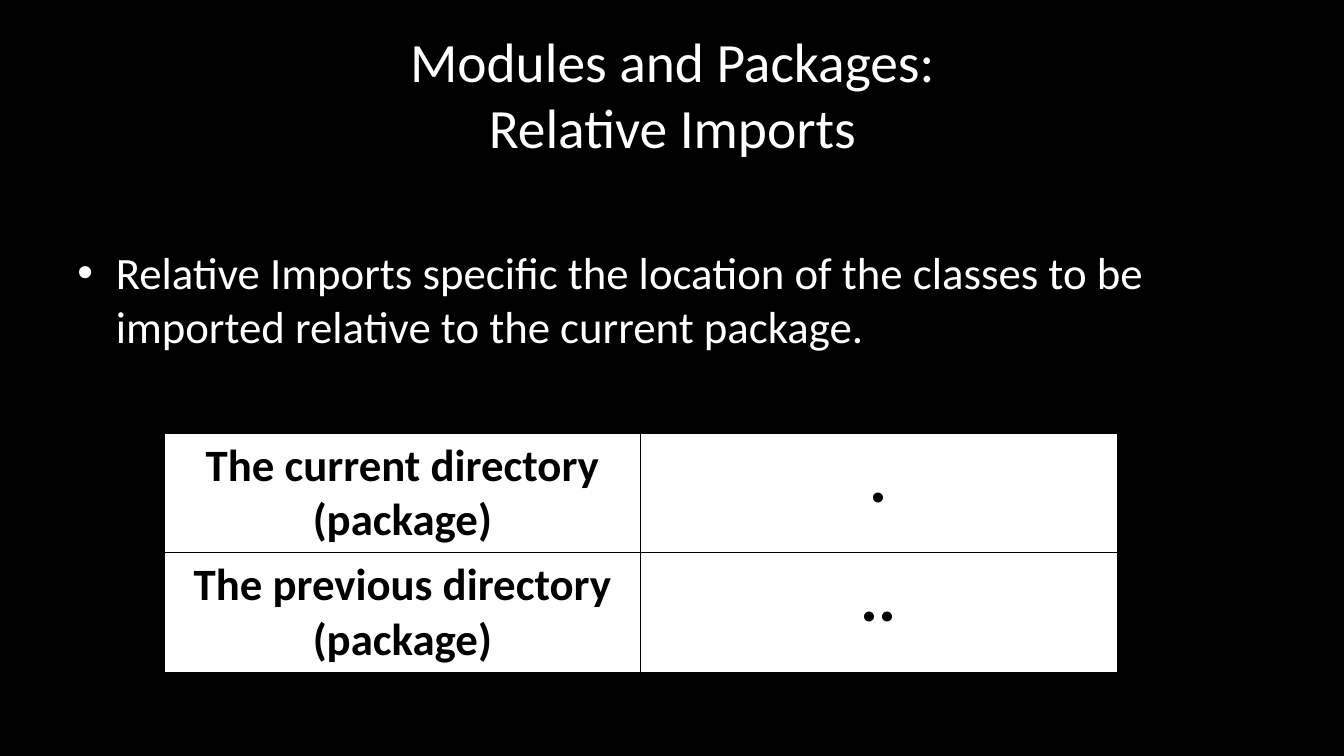
from pptx import Presentation
from pptx.dml.color import RGBColor
from pptx.enum.text import MSO_ANCHOR as Anchor, PP_ALIGN as Align
from pptx.oxml import parse_xml
from pptx.oxml.ns import nsdecls
from pptx.util import Inches, Pt

# Content
FONT = "Calibri"
BLACK, WHITE = "000000", "FFFFFF"
TITLE = "Modules and Packages:\vRelative Imports"
POINT = ("Relative Imports specific the location of the classes "
         "to be imported relative to the current package.")
ROWS = [
    ("The current directory (package)", "."),
    ("The previous directory (package)", ".."),
]
SIZES = (32, 48)  # text size of each table column
LEFT, TOP, WIDTH, HEIGHT = 1.63, 4.3, 9.45, 2.37


def color(code):
    return RGBColor.from_string(code)


def style(para, size, ink, bold=False, align=Align.LEFT):
    para.alignment = align
    for run in para.runs:
        font = run.font
        font.name, font.size, font.bold = FONT, Pt(size), bold
        font.color.rgb = color(ink)


def add_text(slide, box, text):
    frame = slide.shapes.add_textbox(*map(Inches, box)).text_frame
    frame.word_wrap = True
    frame.text = text
    return frame


def add_bullet(para, indent):
    props = para._p.get_or_add_pPr()
    props.set("marL", str(Inches(indent)))
    props.set("indent", str(-Inches(indent)))
    props.append(parse_xml(f'<a:buFont {nsdecls("a")} typeface="Arial"/>'))
    props.append(parse_xml(f'<a:buChar {nsdecls("a")} char="•"/>'))


def add_border(cell, ink, width):
    props = cell._tc.get_or_add_tcPr()
    for i, side in enumerate(("lnL", "lnR", "lnT", "lnB")):
        props.insert(i, parse_xml(
            f'<a:{side} {nsdecls("a")} w="{Pt(width)}"><a:solidFill>'
            f'<a:srgbClr val="{ink}"/></a:solidFill></a:{side}>'))


# Slide
deck = Presentation()
deck.slide_width, deck.slide_height = Inches(13.33), Inches(7.5)
slide = deck.slides.add_slide(deck.slide_layouts[6])
slide.background.fill.solid()
slide.background.fill.fore_color.rgb = color(BLACK)

# Title
frame = add_text(slide, (0.67, 0.3, 12, 1.25), TITLE)
frame.vertical_anchor = Anchor.MIDDLE
style(frame.paragraphs[0], 39.6, WHITE, align=Align.CENTER)

# Bullet point, set one line down in its box
frame = add_text(slide, (0.67, 1.75, 12, 4.95), POINT)
frame.margin_top = Inches(0.68)
style(frame.paragraphs[0], 32, WHITE)
add_bullet(frame.paragraphs[0], 0.38)

# Table
table = slide.shapes.add_table(
    len(ROWS), len(SIZES), *map(Inches, (LEFT, TOP, WIDTH, HEIGHT))).table
table.first_row = table.horz_banding = False
for r, row in enumerate(ROWS):
    for c, (text, size) in enumerate(zip(row, SIZES)):
        cell = table.cell(r, c)
        cell.text = text
        cell.fill.solid()
        cell.fill.fore_color.rgb = color(WHITE)
        add_border(cell, BLACK, 1)
        style(cell.text_frame.paragraphs[0], size, BLACK, True, Align.CENTER)

deck.save("out.pptx")
